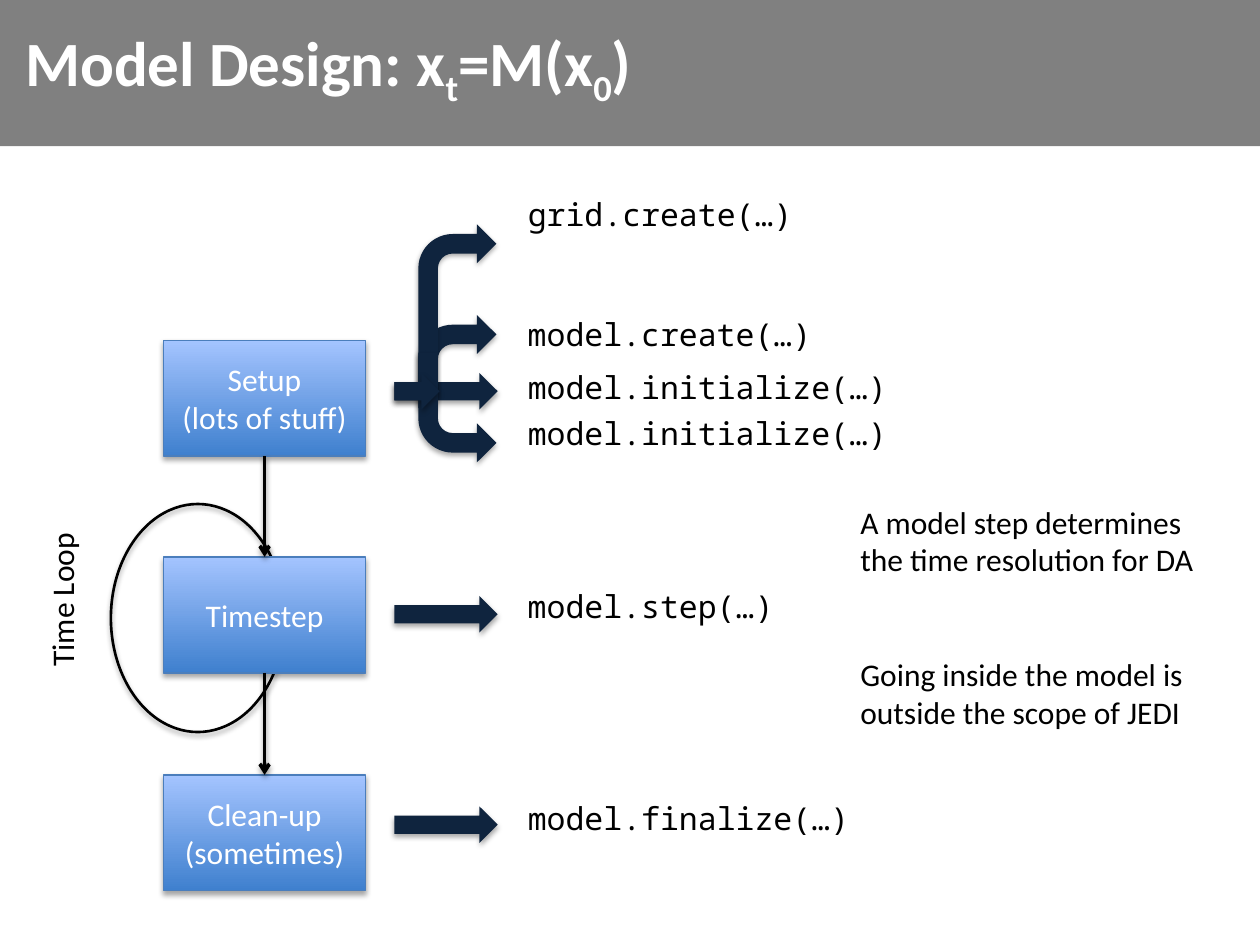
from lxml.etree import SubElement
from pptx import Presentation
from pptx.dml.color import RGBColor
from pptx.enum.shapes import MSO_CONNECTOR, MSO_SHAPE
from pptx.enum.text import MSO_ANCHOR, MSO_AUTO_SIZE, PP_ALIGN
from pptx.oxml.ns import qn
from pptx.util import Inches, Pt

COLORS = {
    "banner": "808080", "white": "FFFFFF", "black": "000000", "arrow": "0F243E",
    "box_bottom": "3F80CE", "box_top": "A4C4FF", "box_line": "4B7EBC",
}
BODY_FONT, CODE_FONT = "Calibri", "Noto Sans Mono"

TITLE = [("Model Design: x", False), ("t", True), ("=M(x", False), ("0", True), (")", False)]
STAGES = [("Setup\n(lots of stuff)", 2.7), ("Timestep", 4.42), ("Clean-up\n(sometimes)", 6.15)]
STAGE_LEFT, STAGE_WIDTH, STAGE_HEIGHT = 1.3, 1.6, 0.92
CALLS = [
    ("grid.create(…)", 1.5, 2.32),
    ("model.create(…)", 2.45, 2.47),
    ("model.initialize(…)", 2.87, 3.08),
    ("model.initialize(…)", 3.24, 3.08),
    ("model.step(…)", 4.61, 2.17),
    ("model.finalize(…)", 6.29, 2.78),
]
CALL_LEFT, CALL_HEIGHT = 4.09, 0.4
STRAIGHT_ARROWS = [(2.96, 0.82), (4.73, 0.82), (6.4, 0.82)]
BENT_ARROWS = [(2.5, 0.74, False), (1.78, 1.29, False), (2.8, 0.87, True)]
BENT_ADJUSTMENTS = [0.25, 0.25, 0.25, 0.44]
JUNCTION = (2.96, 0.36)
NOTES = "A model step determines the time resolution for DA\nGoing inside the model is outside the scope of JEDI"


def color(name):
    return RGBColor.from_string(COLORS[name])


def style_text(frame, font_name, color_name, align=PP_ALIGN.LEFT):
    for paragraph in frame.paragraphs:
        paragraph.alignment = align
        for run in paragraph.runs:
            run.font.name = font_name
            run.font.size = Pt(18)
            run.font.color.rgb = color(color_name)


def add_shadow(part, distance, opacity):
    effects = SubElement(part._element.spPr, qn("a:effectLst"))
    outer = SubElement(effects, qn("a:outerShdw"), blurRad=str(Pt(3.1)), dist=str(Pt(distance)),
                       dir="5400000", rotWithShape="0")
    black = SubElement(outer, qn("a:srgbClr"), val=COLORS["black"])
    SubElement(black, qn("a:alpha"), val=str(opacity * 1000))


def add_part(slide, kind, left, top, width, height):
    return slide.shapes.add_shape(kind, Inches(left), Inches(top), Inches(width), Inches(height))


def add_arrow(slide, kind, left, top, width, height):
    arrow = add_part(slide, kind, left, top, width, height)
    arrow.fill.solid()
    arrow.fill.fore_color.rgb = color("arrow")
    arrow.line.fill.background()
    add_shadow(arrow, 1.8, 35)
    return arrow


def add_straight_arrow(slide, top, width):
    add_arrow(slide, MSO_SHAPE.RIGHT_ARROW, 3.13, top, width, 0.29)


def add_stage(slide, label, top):
    stage = add_part(slide, MSO_SHAPE.FLOWCHART_PROCESS, STAGE_LEFT, top, STAGE_WIDTH, STAGE_HEIGHT)
    stage.fill.gradient()
    stage.fill.gradient_angle = 90
    for stop, name in zip(stage.fill.gradient_stops, ("box_bottom", "box_top")):
        stop.color.rgb = color(name)
    stage.line.color.rgb = color("box_line")
    stage.line.width = Pt(0.75)
    add_shadow(stage, 1.8, 35)
    stage.text_frame.text = label
    stage.text_frame.vertical_anchor = MSO_ANCHOR.MIDDLE
    style_text(stage.text_frame, BODY_FONT, "white", PP_ALIGN.CENTER)
    return stage


def add_flow(slide, source, target):
    flow = slide.shapes.add_connector(MSO_CONNECTOR.STRAIGHT, 0, 0, 0, 0)
    flow.begin_connect(source, 2)
    flow.end_connect(target, 0)
    flow.line.color.rgb = color("black")
    flow.line.width = Pt(2)
    SubElement(flow.line._get_or_add_ln(), qn("a:tailEnd"), type="arrow")
    add_shadow(flow, 1.6, 38)


def add_text(slide, text, font_name, left, top, width, height, wrap=False):
    box = slide.shapes.add_textbox(Inches(left), Inches(top), Inches(width), Inches(height))
    frame = box.text_frame
    frame.text = text
    frame.word_wrap = wrap
    frame.auto_size = MSO_AUTO_SIZE.SHAPE_TO_FIT_TEXT
    style_text(frame, font_name, "black")
    return frame


def add_header(slide):
    banner = add_part(slide, MSO_SHAPE.RECTANGLE, 0, 0, 10, 1.16)
    banner.shadow.inherit = False
    banner.fill.solid()
    banner.fill.fore_color.rgb = color("banner")
    banner.line.fill.background()
    title = slide.shapes.title
    title._element.addprevious(banner._element)
    title.left, title.top, title.width, title.height = map(Inches, (0.1, 0.08, 9.24, 0.89))
    title.text_frame.vertical_anchor = MSO_ANCHOR.MIDDLE
    heading = title.text_frame.paragraphs[0]
    heading.alignment = PP_ALIGN.LEFT
    for text, subscript in TITLE:
        run = heading.add_run()
        run.text = text
        run.font.name = BODY_FONT
        run.font.size = Pt(36)
        run.font.bold = True
        run.font.color.rgb = color("white")
        if subscript:
            run.font._element.set("baseline", "-25000")


def main():
    """Build the model design slide."""
    deck = Presentation()
    deck.slide_width, deck.slide_height = Inches(10), Inches(7.5)
    slide = deck.slides.add_slide(deck.slide_layouts[5])
    add_header(slide)

    time_loop = add_part(slide, MSO_SHAPE.OVAL, 0.88, 4, 1.38, 1.81)
    time_loop.fill.background()
    time_loop.line.color.rgb = color("black")
    time_loop.line.width = Pt(1.5)
    add_shadow(time_loop, 1.8, 35)

    stages = [add_stage(slide, label, top) for label, top in STAGES]
    for source, target in zip(stages, stages[1:]):
        add_flow(slide, source, target)
    loop_label = add_text(slide, "Time Loop", BODY_FONT, 0.29, 4.22, 0.5, 1.17)
    loop_label._bodyPr.set("vert", "vert270")

    for top, width in STRAIGHT_ARROWS:
        add_straight_arrow(slide, top, width)
    for top, height, flipped in BENT_ARROWS:
        branch = add_arrow(slide, MSO_SHAPE.BENT_ARROW, 3.32, top, 0.62, height)
        for index, value in enumerate(BENT_ADJUSTMENTS):
            branch.adjustments[index] = value
        if flipped:
            branch._element.spPr.xfrm.set("flipV", "1")
    add_straight_arrow(slide, *JUNCTION)

    for call, top, width in CALLS:
        add_text(slide, call, CODE_FONT, CALL_LEFT, top, width, CALL_HEIGHT)
    notes = add_text(slide, NOTES, BODY_FONT, 6.73, 3.94, 3.08, 1.92, wrap=True)
    notes.paragraphs[1].space_before = Pt(44)
    deck.save("out.pptx")


if __name__ == "__main__":
    main()
